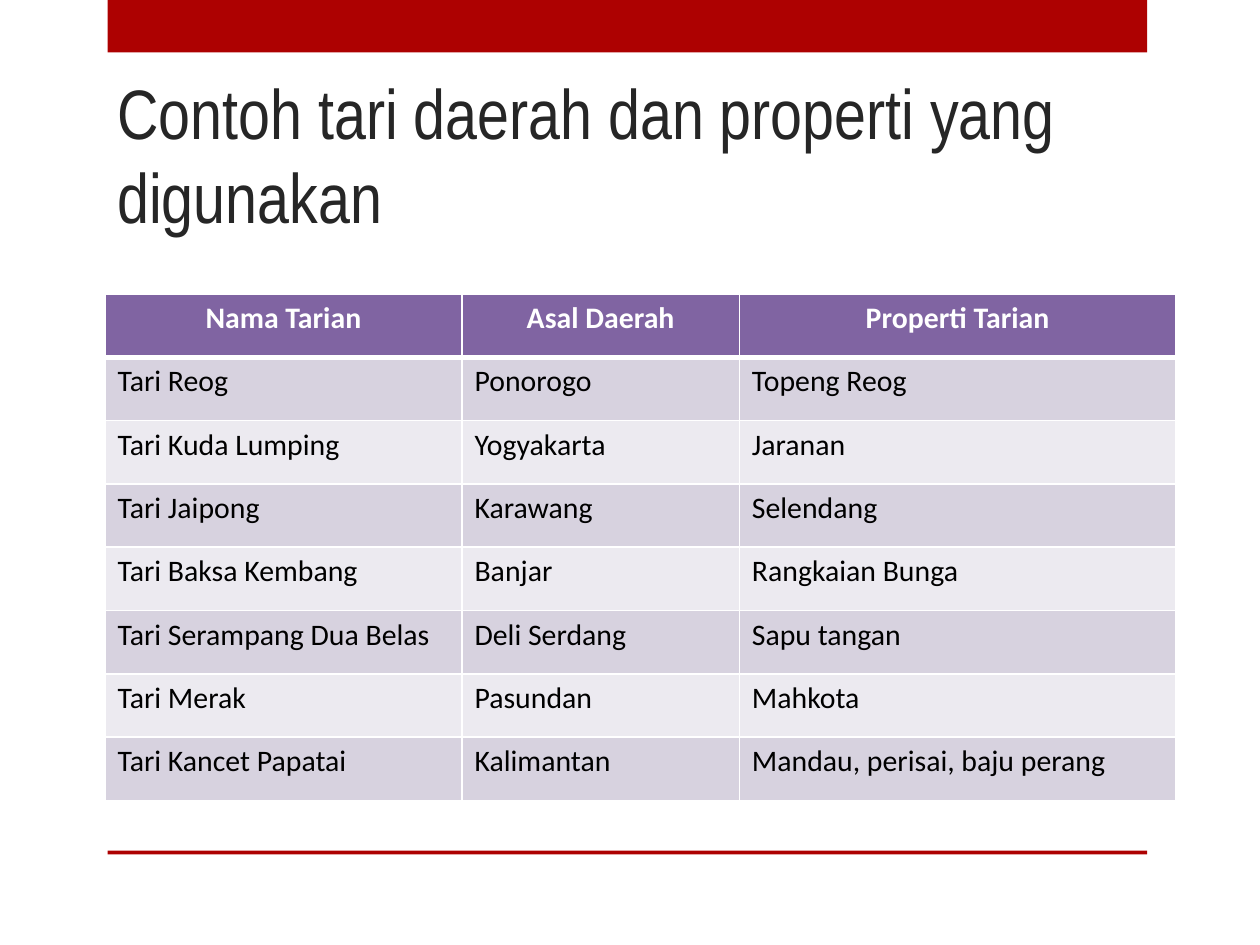
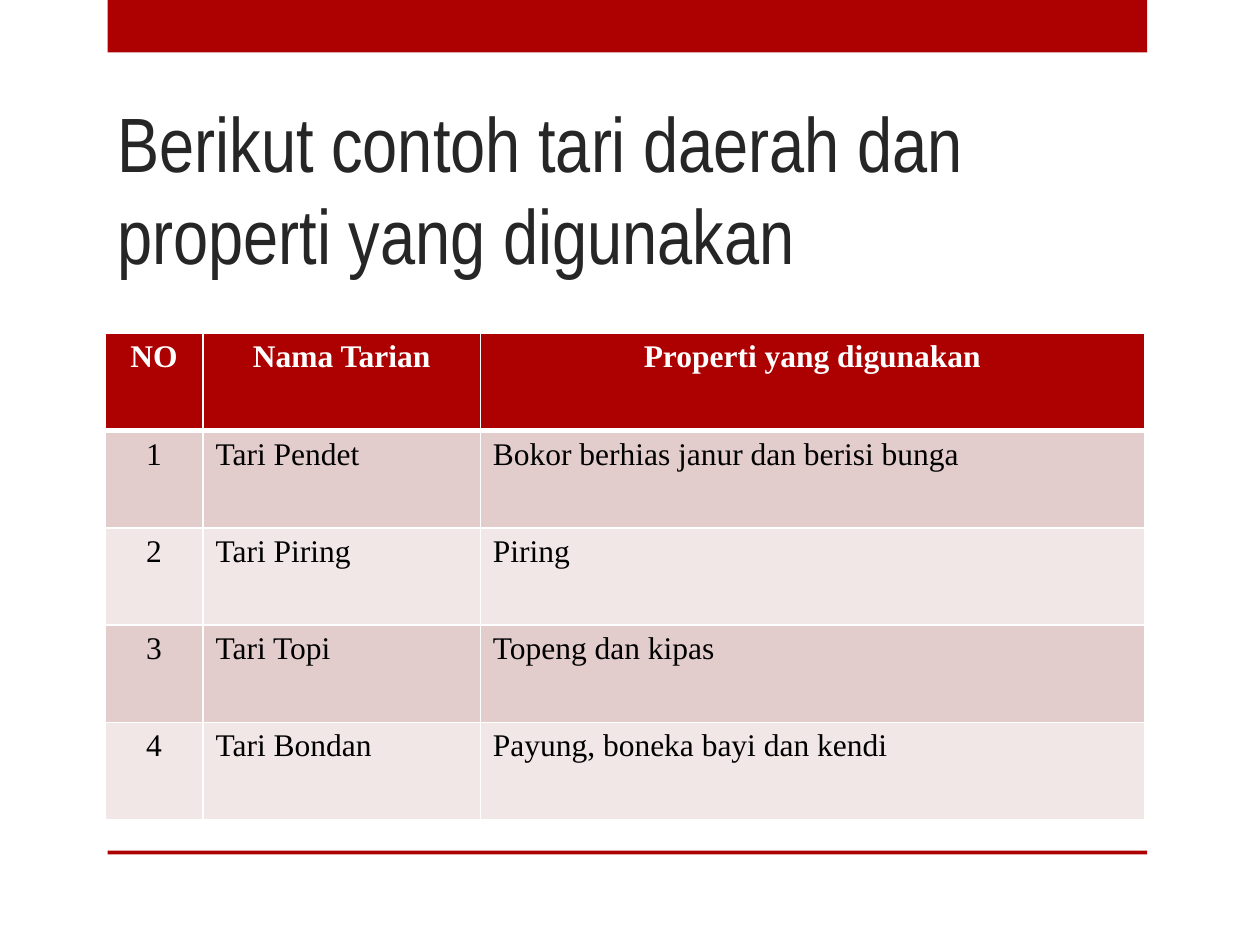
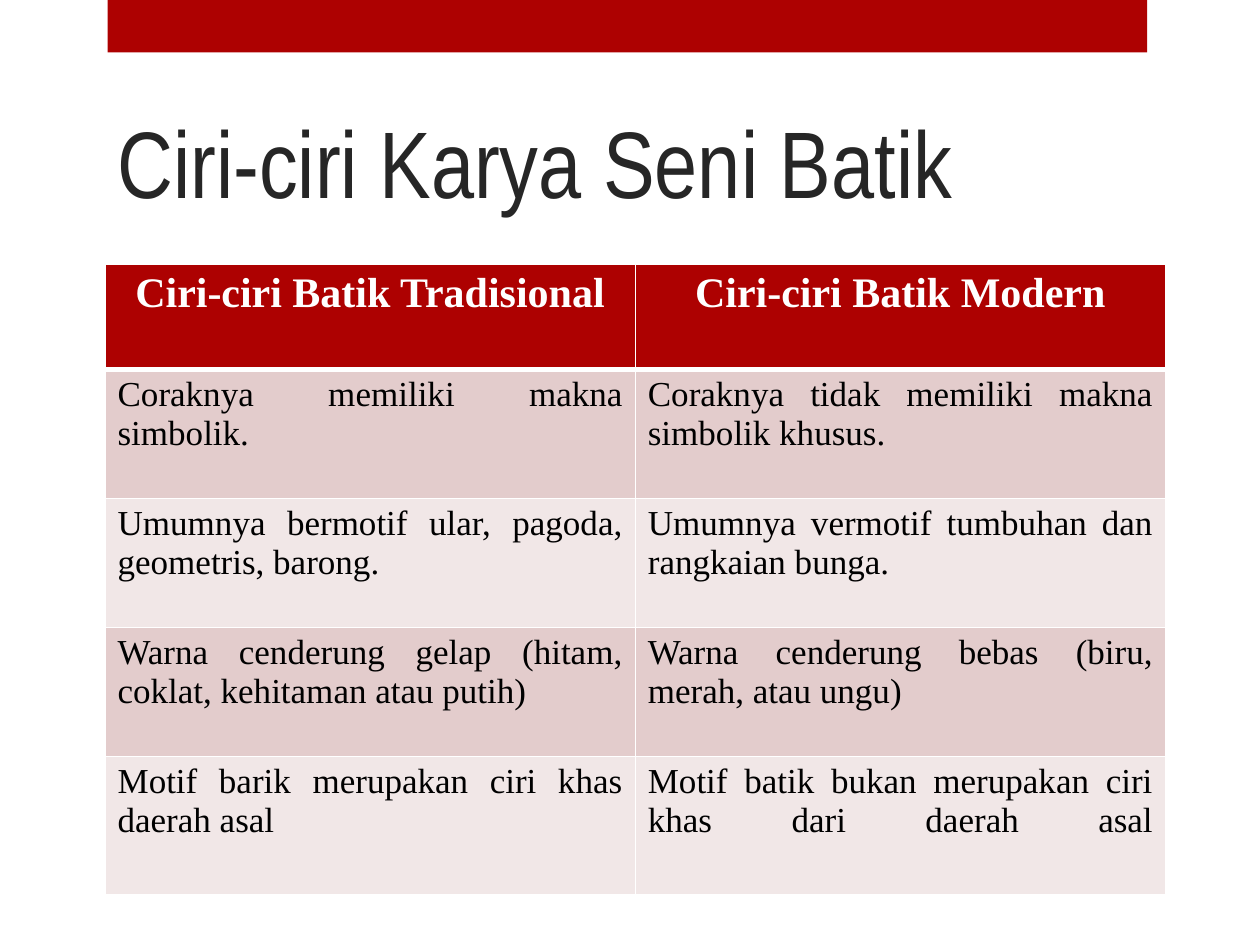
from dataclasses import dataclass

from lxml import etree
from pptx import Presentation
from pptx import util as u
from pptx.dml.color import RGBColor
from pptx.enum import shapes, text
from pptx.oxml.ns import qn

COLORS = {
    "red": "AD0101", "rose": "E3CCCC", "pale_rose": "F1E7E7",
    "purple": "8064A2", "lilac": "D7D2DF", "pale_lilac": "ECEAF0",
    "title": "262626", "black": "000000", "white": "FFFFFF",
}
PURPLE_THEME = ("purple", "lilac", "pale_lilac")
RED_THEME = ("red", "rose", "pale_rose")
TITLE_FONT = "Arial Narrow"
LEFT, CENTER, JUSTIFY = (
    text.PP_ALIGN.LEFT, text.PP_ALIGN.CENTER, text.PP_ALIGN.JUSTIFY)


@dataclass
class Box:
    left: float
    top: float
    width: float
    height: float

    def points(self):
        return [u.Pt(v) for v in (self.left, self.top, self.width, self.height)]


@dataclass
class TableStyle:
    font: str
    header_size: float
    body_size: float
    theme: tuple
    aligns: tuple


PAGE = Box(0, 0, 720, 540)


def color(name):
    return RGBColor.from_string(COLORS[name])


def set_font(paragraph, name, size, color_name, bold=False):
    font = paragraph.font
    font.name, font.size, font.bold = name, u.Pt(size), bold
    font.color.rgb = color(color_name)


def add_bands(page, box):
    """Draw the red band at the top and the thin rule near the foot."""
    for top, height in ((0, 30), (486, 2.25)):
        band = page.shapes.add_shape(
            shapes.MSO_SHAPE.RECTANGLE,
            *Box(box.left + 61.5, box.top + top, 594, height).points())
        band.shadow.inherit = False
        band.fill.solid()
        band.fill.fore_color.rgb = color("red")
        band.line.fill.background()


def add_title(page, box, wording, size):
    frame = page.shapes.add_textbox(*box.points()).text_frame
    frame.word_wrap = True
    frame.vertical_anchor = text.MSO_ANCHOR.BOTTOM
    para = frame.paragraphs[0]
    para.text = wording
    set_font(para, TITLE_FONT, size, "title")


def set_borders(cell, top, bottom):
    """Give the cell white borders; side borders are 1 pt wide."""
    properties = cell._tc.get_or_add_tcPr()
    for side, width in (("L", 1), ("R", 1), ("T", top), ("B", bottom)):
        line = etree.SubElement(properties, qn(f"a:ln{side}"), w=str(u.Pt(width)))
        fill = etree.SubElement(line, qn("a:solidFill"))
        etree.SubElement(fill, qn("a:srgbClr"), val=COLORS["white"])


def add_table(page, box, widths, rows, style, header_height=None):
    """Fill the box with a table; body rows share the height below the header."""
    table = page.shapes.add_table(len(rows), len(widths), *box.points()).table
    header_height = header_height or box.height / len(rows)
    body_height = (box.height - header_height) / (len(rows) - 1)
    for column, width in zip(table.columns, widths):
        column.width = u.Pt(width)
    for r, wordings in enumerate(rows):
        header = r == 0
        table.rows[r].height = u.Pt(header_height if header else body_height)
        fill_name = style.theme[0 if header else 2 - r % 2]
        for c, wording in enumerate(wordings):
            cell = table.cell(r, c)
            set_borders(cell, 3 if r == 1 else 1, 3 if header else 1)
            cell.fill.solid()
            cell.fill.fore_color.rgb = color(fill_name)
            para = cell.text_frame.paragraphs[0]
            para.text = wording
            para.alignment = CENTER if header else style.aligns[c]
            set_font(para, style.font,
                     style.header_size if header else style.body_size,
                     "white" if header else "black", header)


def add_page(deck):
    page = deck.slides.add_slide(deck.slide_layouts[6])
    add_bands(page, PAGE)
    return page


def add_regional_dances(deck):
    page = add_page(deck)
    add_title(page, Box(60, 43, 606, 96.5),
              "Contoh tari daerah dan properti yang digunakan", 40)
    rows = [
        ("Nama Tarian", "Asal Daerah", "Properti Tarian"),
        ("Tari Reog", "Ponorogo", "Topeng Reog"),
        ("Tari Kuda Lumping", "Yogyakarta", "Jaranan"),
        ("Tari Jaipong", "Karawang", "Selendang"),
        ("Tari Baksa Kembang", "Banjar", "Rangkaian Bunga"),
        ("Tari Serampang Dua Belas", "Deli Serdang", "Sapu tangan"),
        ("Tari Merak", "Pasundan", "Mahkota"),
        ("Tari Kancet Papatai", "Kalimantan", "Mandau, perisai, baju perang"),
    ]
    style = TableStyle("Calibri", 17, 17, PURPLE_THEME, (LEFT, LEFT, LEFT))
    add_table(page, Box(60, 168, 612, 289.5), (204, 158.5, 249.5), rows, style)


def add_dance_props(deck):
    page = add_page(deck)
    add_title(page, Box(60, 37.5, 623.5, 126),
              "Berikut contoh tari daerah dan properti yang digunakan", 44)
    rows = [
        ("NO", "Nama Tarian", "Properti yang digunakan"),
        ("1", "Tari Pendet", "Bokor berhias janur dan berisi bunga"),
        ("2", "Tari Piring", "Piring"),
        ("3", "Tari Topi", "Topeng dan kipas"),
        ("4", "Tari Bondan", "Payung, boneka bayi dan kendi"),
    ]
    style = TableStyle("Times New Roman", 18, 18, RED_THEME, (CENTER, LEFT, LEFT))
    add_table(page, Box(60, 190.5, 594, 278), (56, 158.5, 379.5), rows, style)


def add_batik_traits(deck):
    page = add_page(deck)
    add_title(page, Box(60, 43, 589, 85), "Ciri-ciri Karya Seni Batik", 54)
    rows = [
        ("Ciri-ciri Batik Tradisional", "Ciri-ciri Batik Modern"),
        ("Coraknya memiliki makna simbolik.",
         "Coraknya tidak memiliki makna simbolik khusus."),
        ("Umumnya bermotif ular, pagoda, geometris, barong.",
         "Umumnya vermotif tumbuhan dan rangkaian bunga."),
        ("Warna cenderung gelap (hitam, coklat, kehitaman atau putih)",
         "Warna cenderung bebas (biru, merah, atau ungu)"),
        # The closing line break makes the last line justify too.
        ("Motif barik merupakan ciri khas daerah asal",
         "Motif batik bukan merupakan ciri khas dari daerah asal\v"),
    ]
    style = TableStyle("Times New Roman", 24, 20, RED_THEME, (JUSTIFY, JUSTIFY))
    add_table(page, Box(60, 151, 606, 355), (303, 303), rows, style,
              header_height=60)


def main():
    deck = Presentation()
    deck.slide_width, deck.slide_height = u.Pt(PAGE.width), u.Pt(PAGE.height)
    add_regional_dances(deck)
    add_dance_props(deck)
    add_batik_traits(deck)
    deck.save("out.pptx")


if __name__ == "__main__":
    main()
